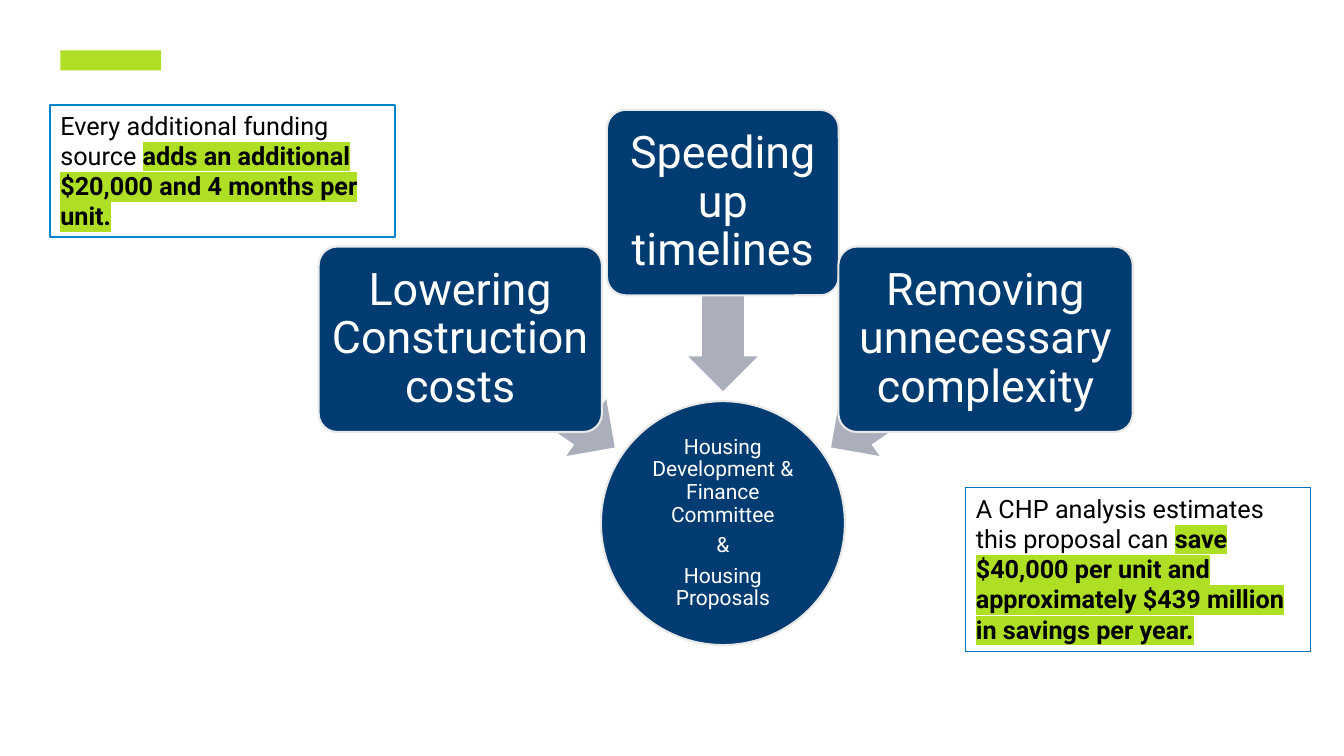
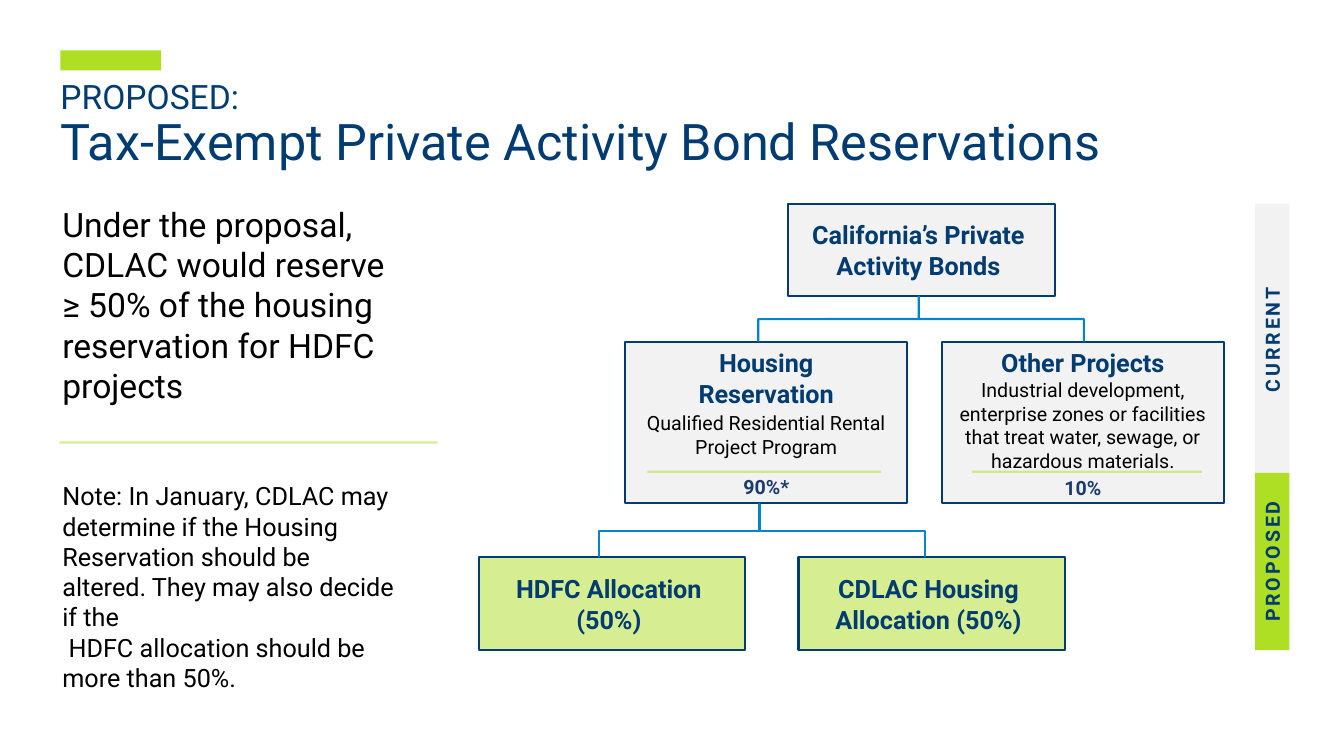
from dataclasses import dataclass
from math import cos, radians, sin

from lxml.etree import SubElement
from pptx import Presentation
from pptx.dml.color import RGBColor
from pptx.enum.shapes import MSO_CONNECTOR, MSO_SHAPE
from pptx.enum.text import MSO_ANCHOR, MSO_AUTO_SIZE, PP_ALIGN
from pptx.oxml.ns import qn
from pptx.util import Emu, Pt


@dataclass(frozen=True)
class Theme:
    font: str = "Roboto"
    navy: str = "003C71"
    share: str = "183C6D"
    lime: str = "AEDF25"
    blue: str = "0085CC"
    outline: str = "0070C0"
    mist: str = "F2F2F2"
    edge: str = "E8E8E8"
    arrow: str = "ABAFBB"
    white: str = "FFFFFF"
    black: str = "000000"
    title: int = 36
    pillar: int = 32
    lead: int = 24
    body: int = 18
    hub: int = 15
    small: int = 14


T = Theme()
EMU_PER_PX = 9144  # 100 px to the inch


def px(n):
    return Emu(round(n * EMU_PER_PX))


def rgb(value):
    return RGBColor.from_string(value)


def fade(sp):
    """Make the first colour of a shape or line half transparent."""
    colour = sp.element.spPr.find(".//" + qn("a:srgbClr"))
    SubElement(colour, qn("a:alpha"), val="50000")


def highlight(r, colour):
    mark = SubElement(r.font._element, qn("a:highlight"))
    SubElement(mark, qn("a:srgbClr"), val=colour)
    r.font._element.find(qn("a:solidFill")).addnext(mark)


def add_run(p, text, size, color, bold=False, mark=None, spacing=0):
    for i, line in enumerate(text.split("\n")):
        if i:
            p.add_line_break()
        r = p.add_run()
        r.text = line
        r.font.size = Pt(size)
        r.font.bold = bold
        r.font.color.rgb = rgb(color)
        if mark:
            highlight(r, mark)
        r.font.name = T.font
        if spacing:
            r.font._element.set("spc", str(spacing * 100))


def write(sp, *paras, align=PP_ALIGN.LEFT, anchor=MSO_ANCHOR.TOP,
          inset=(10, 5, 10, 5), leading=None, gaps=(), **fmt):
    """Fill a shape; a paragraph is a string or a list of (text, format) runs."""
    tf = sp.text_frame
    tf.word_wrap = True
    tf.auto_size = MSO_AUTO_SIZE.NONE
    tf.vertical_anchor = anchor
    tf.margin_left, tf.margin_top, tf.margin_right, tf.margin_bottom = map(px, inset)
    base = {"size": T.body, "color": T.black, **fmt}
    for i, para in enumerate(paras):
        p = tf.add_paragraph() if i else tf.paragraphs[0]
        p.alignment = align
        if leading:
            p.line_spacing = leading
        if i and gaps:
            p.space_before = Pt(gaps[i - 1])
        for text, extra in [(para, {})] if isinstance(para, str) else para:
            add_run(p, text, **{**base, **extra})
    return sp


def add_shape(slide, kind, box, fill=None, line=None, weight=1.5, turn=0):
    sp = slide.shapes.add_shape(kind, *map(px, box))
    sp.shadow.inherit = False
    sp.rotation = turn
    if fill:
        sp.fill.solid()
        sp.fill.fore_color.rgb = rgb(fill)
    else:
        sp.fill.background()
    if line:
        sp.line.color.rgb = rgb(line)
        sp.line.width = Pt(weight)
    else:
        sp.line.fill.background()
    return sp


def add_text(slide, box, *paras, **fmt):
    return write(slide.shapes.add_textbox(*map(px, box)), *paras, **fmt)


def add_rule(slide, x, y, w):
    line = slide.shapes.add_connector(
        MSO_CONNECTOR.STRAIGHT, px(x), px(y), px(x + w), px(y))
    line.line.color.rgb = rgb(T.lime)
    line.line.width = Pt(1.5)
    SubElement(line.element.spPr, qn("a:effectLst"))
    fade(line)


def quarter_turned(x, y, w, h):
    """Box to give a shape that fills x, y, w, h after a quarter turn."""
    return x + (w - h) / 2, y + (h - w) / 2, h, w


def centred(cx, cy, w, h):
    return cx - w / 2, cy - h / 2, w, h


def brand_master(prs, slide):
    """Put the accent bar on the master, shared by every slide."""
    bar = add_shape(slide, MSO_SHAPE.RECTANGLE, (60, 50, 100, 20), T.lime)
    bar.element.nvSpPr.cNvPr.set("id", "100")
    prs.slide_master.shapes.element.append(bar.element)


def converging_goals(slide, cx, cy):
    """Three goals whose arrows point at a hub centred on cx, cy."""
    label = dict(align=PP_ALIGN.CENTER, anchor=MSO_ANCHOR.MIDDLE,
                 leading=0.9, color=T.white)
    hub = add_shape(slide, MSO_SHAPE.OVAL, centred(cx, cy, 242, 242), T.navy, T.edge)
    write(hub, "Housing Development & Finance Committee", "&", "Housing Proposals",
          size=T.hub, inset=(1, 1, 1, 1), gaps=(5.5, 5.5), **label)
    goals = [(215, 281, "Lowering Construction costs"),
             (270, 230, "Speeding up timelines"),
             (325, 292, "Removing unnecessary complexity")]
    for angle, width, text in goals:
        dx, dy = cos(radians(angle)), sin(radians(angle))
        arrow = add_shape(slide, MSO_SHAPE.LEFT_ARROW,
                          centred(cx + 224 * dx, cy + 224 * dy, 186, 69),
                          T.arrow, turn=angle)
        arrow.adjustments[0], arrow.adjustments[1] = 0.6, 0.5
        goal = add_shape(slide, MSO_SHAPE.ROUNDED_RECTANGLE,
                         centred(cx + 318 * dx, cy + 318 * dy, width, 184),
                         T.navy, T.edge)
        goal.adjustments[0] = 0.1
        write(goal, text, size=T.pillar, inset=(7, 7, 7, 7), **label)


def callout(slide, box, plain, strong, **style):
    sp = add_shape(slide, MSO_SHAPE.RECTANGLE, box, **style)
    write(sp, [(plain, {}), (strong, {"bold": True, "mark": T.lime})])


def set_title(slide, kicker, text):
    title = slide.shapes.title
    title.left, title.top, title.width, title.height = map(px, (50, 75, 1222, 121))
    write(title, [(kicker + "\n", {"size": T.lead}), (text, {})],
          size=T.title, color=T.navy, leading=0.9)


def proposal_column(slide, x, y):
    add_text(slide, (x, y, 353, 212),
             "Under the proposal, CDLAC would reserve ≥ 50% of the housing "
             "reservation for HDFC projects", size=T.lead)
    add_rule(slide, x + 7, y + 242, 375)
    add_text(slide, (x, y + 275, 353, 192),
             "Note: In January, CDLAC may determine if the Housing Reservation "
             "should be altered. They may also decide if the",
             " HDFC allocation should be more than 50%.")


def name_box(slide, x, y, text, fill):
    sp = add_shape(slide, MSO_SHAPE.RECTANGLE, (x, y, 264, 92), fill, T.navy)
    return write(sp, text, align=PP_ALIGN.CENTER, anchor=MSO_ANCHOR.MIDDLE,
                 inset=(10, 5, 16, 5), color=T.navy, bold=True)


def share_box(slide, x, y, name, detail, share, gaps, rule):
    """Category box with a rule above its share; rule is its offset and width."""
    sp = add_shape(slide, MSO_SHAPE.RECTANGLE, (x, y, 280, 160), T.mist, T.navy)
    write(sp, [(name, {"size": T.body, "color": T.navy, "bold": True})], detail,
          [(share, {"color": T.share, "bold": True})],
          align=PP_ALIGN.CENTER, inset=(10, 6, 10, 0), size=T.small, gaps=gaps)
    add_rule(slide, x + rule[0], y + 129, rule[1])


def branch(slide, *box):
    sp = add_shape(slide, MSO_SHAPE.LEFT_BRACE, quarter_turned(*box),
                   line=T.blue, turn=90)
    sp.adjustments[0], sp.adjustments[1] = 0, 0.507


def allocation_tree(slide, x, y):
    name_box(slide, x + 307, y, "California’s Private Activity Bonds", T.mist)
    share_box(slide, x + 145, y + 137, "Housing\nReservation",
              "Qualified Residential Rental Project Program", "90%*",
              (2, 12), (22, 232))
    share_box(slide, x + 459, y + 137, "Other Projects",
              "Industrial development, enterprise zones or facilities that treat "
              "water, sewage, or hazardous materials.", "10%",
              (0, 3), (30, 228))
    branch(slide, x + 277, y + 92, 323, 45)
    for dx, text in [(317, "CDLAC Housing Allocation (50%)"),
                     (0, "HDFC Allocation (50%)")]:
        fade(name_box(slide, x + dx, y + 351, text, T.lime))
    branch(slide, x + 119, y + 298, 323, 53)


def stage_tabs(slide, x, y):
    for dy, height, text, fill in [(0, 270, "CURRENT", T.mist),
                                   (267, 176, "PROPOSED", T.lime)]:
        sp = add_shape(slide, MSO_SHAPE.RECTANGLE,
                       quarter_turned(x, y + dy, 34, height), fill, turn=270)
        write(sp, text, align=PP_ALIGN.CENTER, size=T.small, color=T.navy,
              bold=True, spacing=2)


def goals_slide(slide):
    converging_goals(slide, 717, 519)
    callout(slide, (50, 104, 342, 131), "Every additional funding source ",
            "adds an additional $20,000 and 4 months per unit.",
            fill=T.white, line=T.blue)
    callout(slide, (958, 484, 342, 162), "A CHP analysis estimates this proposal can ",
            "save $40,000 per unit and approximately $439 million in savings per year.",
            line=T.outline, weight=0.75)


def reservations_slide(slide):
    set_title(slide, "PROPOSED:", "Tax-Exempt Private Activity Bond Reservations")
    allocation_tree(slide, 475, 202)
    stage_tabs(slide, 1245, 202)
    proposal_column(slide, 52, 197)


def main():
    prs = Presentation()
    prs.slide_width, prs.slide_height = px(1333), px(750)
    title_only, blank = prs.slide_layouts[5], prs.slide_layouts[6]
    goals = prs.slides.add_slide(blank)
    brand_master(prs, goals)
    goals_slide(goals)
    reservations_slide(prs.slides.add_slide(title_only))
    prs.save("out.pptx")


if __name__ == "__main__":
    main()
